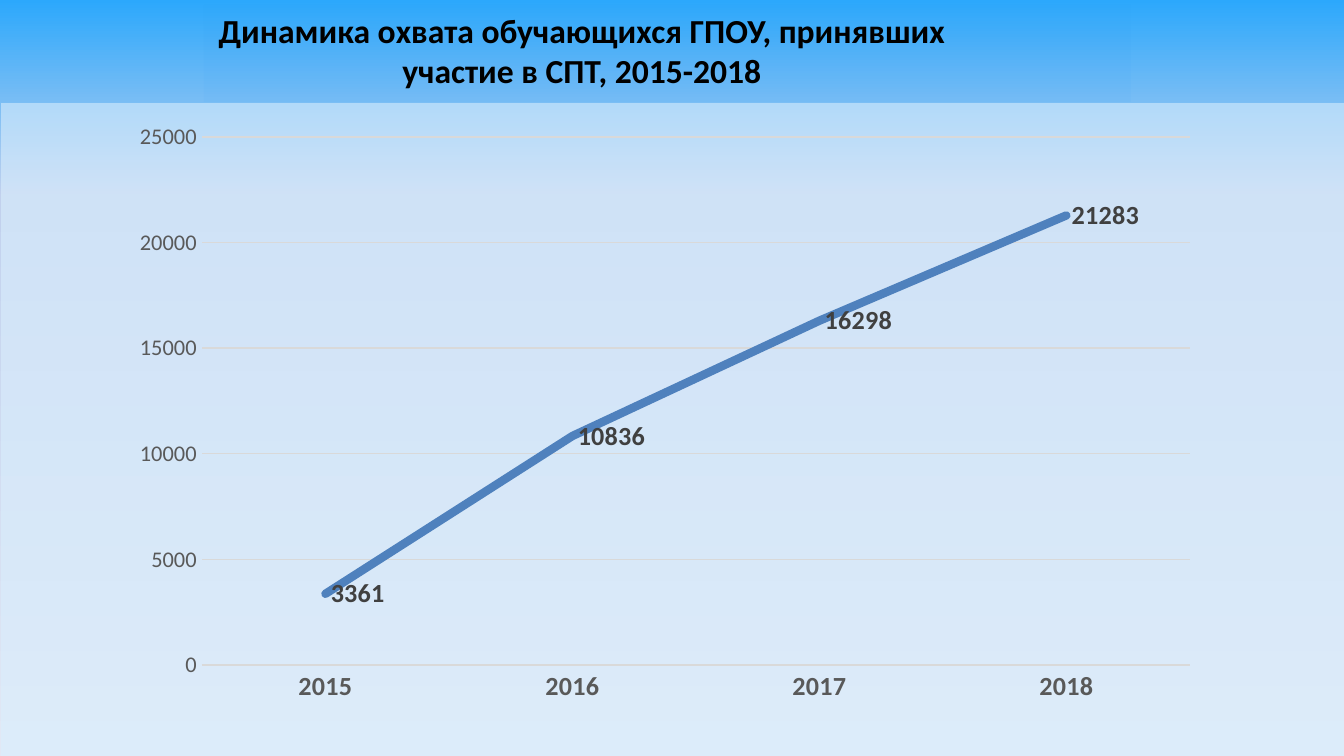
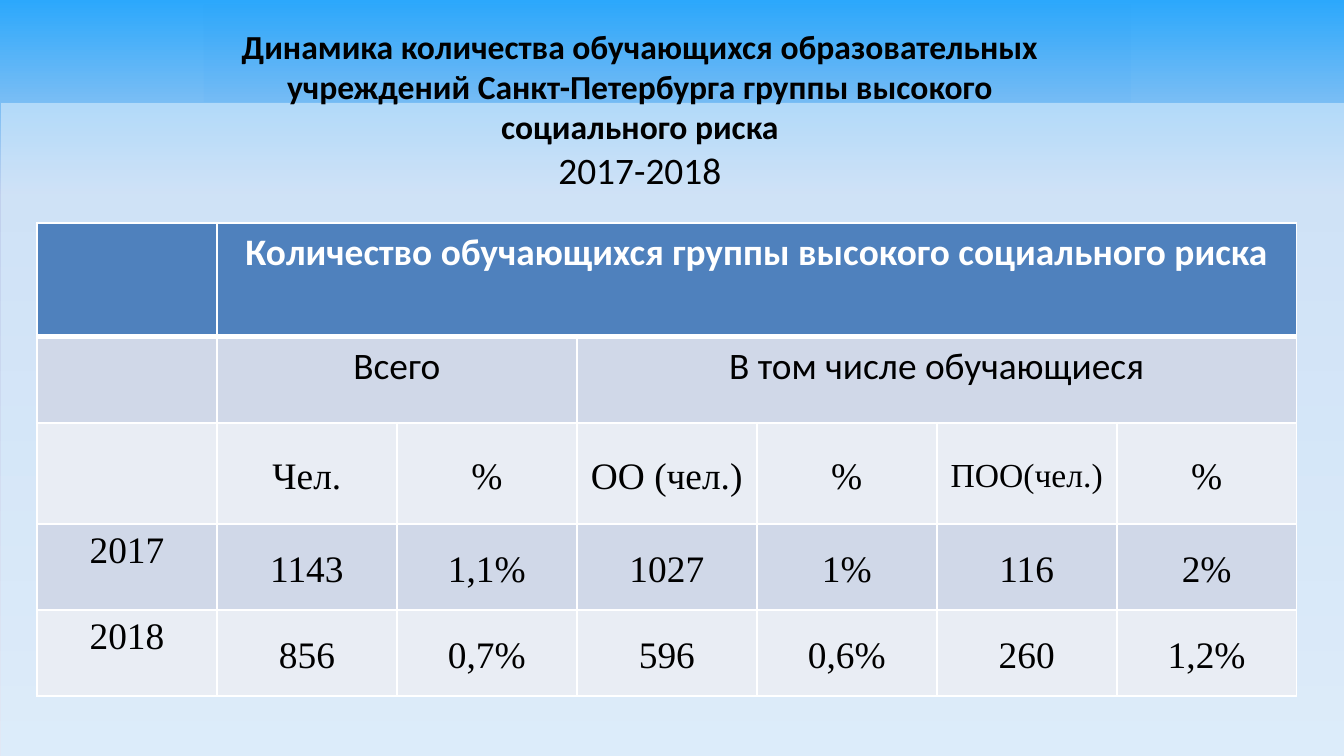
"""Build two slides on student testing coverage and high social risk groups."""
from copy import deepcopy
from dataclasses import dataclass
from typing import Optional

from lxml.etree import SubElement
from pptx import Presentation
from pptx.chart.data import CategoryChartData
from pptx.dml.color import RGBColor
from pptx.enum.chart import XL_CHART_TYPE as ChartType
from pptx.enum.chart import XL_LABEL_POSITION as LabelPosition
from pptx.enum.chart import XL_MARKER_STYLE as MarkerStyle
from pptx.enum.chart import XL_TICK_MARK as TickMark
from pptx.enum.shapes import MSO_SHAPE as Preset
from pptx.enum.text import MSO_ANCHOR as Anchor
from pptx.enum.text import MSO_AUTO_SIZE as AutoSize
from pptx.enum.text import PP_ALIGN as Align
from pptx.oxml import parse_xml
from pptx.oxml.ns import nsdecls, qn
from pptx.util import Emu, Pt

BLACK = RGBColor(0x00, 0x00, 0x00)
WHITE = RGBColor(0xFF, 0xFF, 0xFF)
BLUE = RGBColor(0x4F, 0x81, 0xBD)
ROW_DARK = RGBColor(0xD0, 0xD8, 0xE8)
ROW_LIGHT = RGBColor(0xE9, 0xED, 0xF4)
GRID = RGBColor(0xD9, 0xD9, 0xD9)
AXIS_TEXT = RGBColor(0x59, 0x59, 0x59)
LABEL_TEXT = RGBColor(0x40, 0x40, 0x40)
SKY = RGBColor(0x2C, 0xA8, 0xFC)
MIST = RGBColor(0xC2, 0xD1, 0xED)
HAZE = RGBColor(0xE1, 0xE8, 0xF5)
PANEL = RGBColor(0xDA, 0xEF, 0xFE)
BAND = RGBColor(0x29, 0x9A, 0xF7)

SANS = "Calibri"
SERIF = "Times New Roman"
EMU_PER_PX = 914400 / 134.4


def px(length: float) -> Emu:
    """Turn pixels into EMU."""
    return Emu(round(length * EMU_PER_PX))


@dataclass(frozen=True)
class Box:
    """Place and size in pixels."""
    left: int
    top: int
    width: int
    height: int

    def emu(self) -> tuple:
        """Return the four lengths in EMU."""
        return tuple(px(n) for n in (self.left, self.top, self.width, self.height))


@dataclass(frozen=True)
class Backdrop:
    """A translucent rectangle behind the content."""
    box: Box
    color: RGBColor
    opacity: int


@dataclass(frozen=True)
class Row:
    """A table row: its texts, the column spans of these texts, and its look."""
    height: int
    texts: tuple
    spans: tuple
    fill: RGBColor
    color: RGBColor = BLACK
    bold: bool = False
    font: str = SANS


BACKDROPS = (
    Backdrop(Box(1, 103, 1343, 653), PANEL, 58),
    Backdrop(Box(204, 5, 927, 97), BAND, 5),
)
GRADIENT = ((0, SKY), (0.26, MIST), (1, HAZE))
COVERAGE = {"2015": 3361, "2016": 10836, "2017": 16298, "2018": 21283}
CHART_BOX = Box(117, 112, 1094, 603)
PLOT_BOX = Box(202, 137, 988, 528)
TABLE_LEFT, TABLE_TOP, COLUMN_WIDTH, COLUMN_COUNT = 37, 223, 180, 7
SINGLE = (1,) * COLUMN_COUNT
ROWS = (
    Row(114, ("", "Количество обучающихся группы высокого социального риска"),
        (1, 6), BLUE, WHITE, True),
    Row(86, ("", "Всего", "В том числе обучающиеся"), (1, 2, 4), ROW_DARK),
    Row(101, ("", "Чел.", "%", "ОО (чел.)", "%", "ПОО(чел.)", "%"),
        SINGLE, ROW_LIGHT, font=SERIF),
    Row(86, ("2017", "1143", "1,1%", "1027", "1%", "116", "2%"),
        SINGLE, ROW_DARK, font=SERIF),
    Row(86, ("2018", "856", "0,7%", "596", "0,6%", "260", "1,2%"),
        SINGLE, ROW_LIGHT, font=SERIF),
)


def style_font(font, size: float, color: RGBColor, bold: bool = False,
               name: str = SANS) -> None:
    """Set the face, size, weight and colour of a font."""
    font.name, font.size, font.bold = name, Pt(size), bold
    font.color.rgb = color


def write(para, text: str, *, size: float, color: RGBColor = BLACK,
          bold: bool = False, font: str = SANS,
          spacing: Optional[float] = None) -> None:
    """Add a formatted span to a centred paragraph."""
    para.alignment = Align.CENTER
    if spacing:
        para.line_spacing = spacing
    span = para.add_run()
    span.text = text
    style_font(span.font, size, color, bold, font)


def paint_background(deck) -> None:
    """Give the master a vertical three-stop gradient."""
    fill = deck.slide_master.background.fill
    fill.gradient()
    fill.gradient_angle = 270
    stop = next(deck.slide_master._element.iter(qn("a:gs")))
    stop.addnext(deepcopy(stop))
    for stop, (position, color) in zip(fill.gradient_stops, GRADIENT):
        stop.position = position
        stop.color.rgb = color


def add_backdrop(page, backdrop: Backdrop) -> None:
    """Draw one translucent rectangle."""
    shape = page.shapes.add_shape(Preset.RECTANGLE, *backdrop.box.emu())
    shape.shadow.inherit = False
    shape.line.fill.background()
    shape.fill.solid()
    shape.fill.fore_color.rgb = backdrop.color
    tint = next(shape._element.spPr.iter(qn("a:srgbClr")))
    SubElement(tint, qn("a:alpha")).set("val", str(backdrop.opacity * 1000))


def add_page(deck, title: str, box: Box):
    """Add a slide with its backdrops and bold title."""
    page = deck.slides.add_slide(deck.slide_layouts[5])
    for backdrop in BACKDROPS:
        add_backdrop(page, backdrop)
    holder = page.shapes.title
    page.shapes._spTree.append(holder._element)
    holder.left, holder.top, holder.width, holder.height = box.emu()
    frame = holder.text_frame
    frame.word_wrap = True
    frame.auto_size = AutoSize.SHAPE_TO_FIT_TEXT
    frame.vertical_anchor = Anchor.TOP
    write(frame.paragraphs[0], title, size=18, bold=True)
    return page


def fix_plot_area(chart) -> None:
    """Pin the inner plot area inside the chart."""
    plot_area = next(chart._chartSpace.iter(qn("c:plotArea")))
    for layout in plot_area.findall(qn("c:layout")):
        plot_area.remove(layout)
    layout = parse_xml(f"<c:layout {nsdecls('c')}><c:manualLayout/></c:layout>")
    settings = (
        ("layoutTarget", "inner"), ("xMode", "edge"), ("yMode", "edge"),
        ("x", (PLOT_BOX.left - CHART_BOX.left) / CHART_BOX.width),
        ("y", (PLOT_BOX.top - CHART_BOX.top) / CHART_BOX.height),
        ("w", PLOT_BOX.width / CHART_BOX.width),
        ("h", PLOT_BOX.height / CHART_BOX.height),
    )
    for name, value in settings:
        SubElement(layout[0], qn(f"c:{name}")).set("val", str(value))
    plot_area.insert(0, layout)


def style_line(line, color: RGBColor, width: float) -> None:
    """Set the colour and width of a line."""
    line.color.rgb = color
    line.width = Pt(width)


def add_coverage_chart(page) -> None:
    """Draw the line chart of yearly coverage."""
    data = CategoryChartData()
    data.categories = list(COVERAGE)
    data.add_series("Series 1", list(COVERAGE.values()))
    chart = page.shapes.add_chart(ChartType.LINE, *CHART_BOX.emu(), data).chart
    chart.has_legend = chart.has_title = False
    style_font(chart.font, 10, BLACK)
    fix_plot_area(chart)

    years, counts = chart.category_axis, chart.value_axis
    for axis in (years, counts):
        axis.major_tick_mark = axis.minor_tick_mark = TickMark.NONE
    style_font(years.tick_labels.font, 14, AXIS_TEXT, True)
    style_line(years.format.line, GRID, 0.75)
    style_font(counts.tick_labels.font, 12, AXIS_TEXT)
    counts.format.line.fill.background()
    counts.minimum_scale, counts.maximum_scale, counts.major_unit = 0, 25000, 5000
    style_line(counts.major_gridlines.format.line, GRID, 0.75)

    plot = chart.plots[0]
    plot.vary_by_categories = False
    series = plot.series[0]
    series.smooth = False
    series.marker.style = MarkerStyle.NONE
    style_line(series.format.line, BLUE, 4.5)
    next(series._element.iter(qn("a:ln"))).set("cap", "rnd")
    labels = series.data_labels
    labels.show_value = True
    labels.position = LabelPosition.RIGHT
    style_font(labels.font, 14, LABEL_TEXT, True)


def style_cell(cell, fill: RGBColor, top: int, bottom: int) -> None:
    """Give a cell its white borders and fill."""
    properties = cell._tc.get_or_add_tcPr()
    for side, width in (("L", 1), ("R", 1), ("T", top), ("B", bottom)):
        properties.append(parse_xml(
            f'<a:ln{side} {nsdecls("a")} w="{Pt(width)}"><a:solidFill>'
            f'<a:srgbClr val="{WHITE}"/></a:solidFill></a:ln{side}>'))
    cell.fill.solid()
    cell.fill.fore_color.rgb = fill


def fill_row(table, index: int, row: Row) -> None:
    """Style, merge and write the cells of one row."""
    table.rows[index].height = px(row.height)
    for column in range(COLUMN_COUNT):
        style_cell(table.cell(index, column), row.fill,
                   3 if index == 1 else 1, 3 if index == 0 else 1)
    column = 0
    for text, width in zip(row.texts, row.spans):
        cell = table.cell(index, column)
        if width > 1:
            cell.merge(table.cell(index, column + width - 1))
        is_data = row.font == SERIF and bool(text)
        if is_data:
            cell.margin_left = cell.margin_right = px(9)
            cell.margin_top = cell.margin_bottom = 0
            cell.vertical_anchor = Anchor.MIDDLE if column else Anchor.TOP
        if text:
            write(cell.text_frame.paragraphs[0], text,
                  size=18 if text == "ПОО(чел.)" else 20, color=row.color,
                  bold=row.bold, font=row.font, spacing=1.15 if is_data else None)
        column += width


def add_risk_table(page) -> None:
    """Draw the table of high social risk groups."""
    box = Box(TABLE_LEFT, TABLE_TOP, COLUMN_WIDTH * COLUMN_COUNT,
              sum(row.height for row in ROWS))
    table = page.shapes.add_table(len(ROWS), COLUMN_COUNT, *box.emu()).table
    table.first_row = table.horz_banding = False
    for column in table.columns:
        column.width = px(COLUMN_WIDTH)
    for index, row in enumerate(ROWS):
        fill_row(table, index, row)


def main() -> None:
    """Build and save the deck."""
    deck = Presentation()
    deck.slide_width, deck.slide_height = px(1344), px(756)
    paint_background(deck)

    page = add_page(
        deck, "Динамика охвата обучающихся ГПОУ, принявших участие в СПТ, 2015-2018",
        Box(185, 3, 794, 95))
    add_coverage_chart(page)

    page = add_page(
        deck, "Динамика количества обучающихся образовательных учреждений "
        "Санкт-Петербурга группы высокого социального риска",
        Box(185, 19, 910, 181))
    para = page.shapes.title.text_frame.paragraphs[0]
    para.add_line_break()
    write(para, "2017-2018", size=20)
    add_risk_table(page)
    deck.save("out.pptx")


if __name__ == "__main__":
    main()
